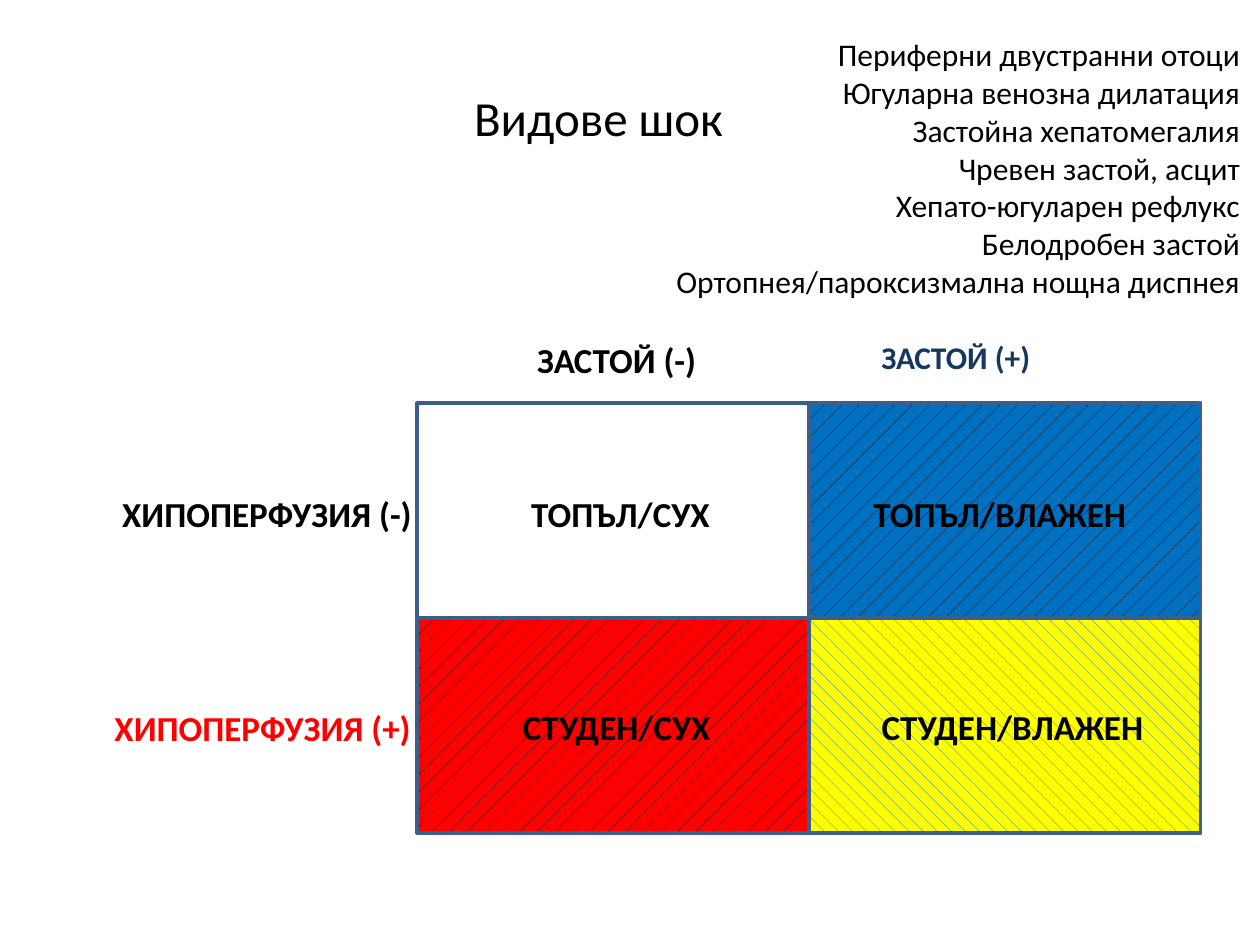
from pptx import Presentation
from pptx.dml.color import RGBColor
from pptx.enum.dml import MSO_PATTERN
from pptx.enum.shapes import MSO_SHAPE
from pptx.enum.text import MSO_ANCHOR, MSO_AUTO_SIZE, PP_ALIGN
from pptx.util import Inches, Pt

BLACK = RGBColor(0x00, 0x00, 0x00)
WHITE = RGBColor(0xFF, 0xFF, 0xFF)
RED = RGBColor(0xFF, 0x00, 0x00)
BLUE = RGBColor(0x00, 0x70, 0xC0)
YELLOW = RGBColor(0xFF, 0xFF, 0x00)
NAVY = RGBColor(0x17, 0x37, 0x5E)
BORDER = RGBColor(0x3A, 0x5F, 0x8C)

RECTANGLE = MSO_SHAPE.RECTANGLE
DOTS = MSO_PATTERN.PERCENT_5
SHINGLE = MSO_PATTERN.SHINGLE
MIDDLE = MSO_ANCHOR.MIDDLE
FIT_SHAPE = MSO_AUTO_SIZE.SHAPE_TO_FIT_TEXT
CENTER, RIGHT = PP_ALIGN.CENTER, PP_ALIGN.RIGHT

TITLE_ONLY = 5
GRID_LEFT, GRID_TOP = 3.31, 3.2
CELL_WIDTH, CELL_HEIGHT = 3.11, 1.7
ROW_STEP = 1.71

CONGESTION_SIGNS = [
    "Периферни двустранни отоци",
    "Югуларна венозна дилатация",
    "Застойна хепатомегалия",
    "Чревен застой, асцит",
    "Хепато-югуларен рефлукс",
    "Белодробен застой",
    "Ортопнея/пароксизмална нощна диспнея",
]
QUADRANTS = [
    (0, 0, WHITE, None, None),
    (1, 0, RED, DOTS, BLACK),
    (0, 1, BLUE, DOTS, BLACK),
    (1, 1, YELLOW, SHINGLE, BLUE),
]
AXIS_LABELS = [
    ("ХИПОПЕРФУЗИЯ (-)", 0.66, 3.86, 2.92, BLACK),
    ("ХИПОПЕРФУЗИЯ (+)", 0.59, 5.56, 2.99, RED),
]
SHOCK_TYPES = [
    ("ТОПЪЛ/СУХ", 3.37, 3.86, 3.11),
    ("ТОПЪЛ/ВЛАЖЕН", 6.42, 3.86, 3.03),
    ("СТУДЕН/СУХ", 3.34, 5.55, 3.11),
    ("СТУДЕН/ВЛАЖЕН", 6.48, 5.55, 3.11),
]


def write(frame, text, size=20, color=BLACK, bold=True, align=CENTER,
          before=0, indent=0):
    paragraph = frame.paragraphs[0]
    if paragraph.runs:
        paragraph = frame.add_paragraph()
    paragraph.alignment = align
    if before:
        paragraph.space_before = Pt(before)
    if indent:
        paragraph._p.get_or_add_pPr().set("marL", str(Inches(indent)))
    run = paragraph.add_run()
    run.text = text
    run.font.name = "Calibri"
    run.font.size = Pt(size)
    run.font.bold = bold
    run.font.color.rgb = color


class ShockSlide:
    def __init__(self, slide, border=BORDER, border_width=2):
        self.slide = slide
        self.border = border
        self.border_width = Pt(border_width)

    def title(self, text, left, top, width, height):
        heading = self.slide.shapes.title
        heading.left, heading.top = Inches(left), Inches(top)
        heading.width, heading.height = Inches(width), Inches(height)
        heading.text_frame.vertical_anchor = MIDDLE
        write(heading.text_frame, text, size=28, bold=False)

    def text_area(self, left, top, width, height=0.44, wrap=True):
        area = self.slide.shapes.add_textbox(
            Inches(left), Inches(top), Inches(width), Inches(height))
        frame = area.text_frame
        frame.word_wrap = wrap
        frame.auto_size = FIT_SHAPE
        return frame

    def label(self, text, left, top, width, wrap=True, color=BLACK):
        write(self.text_area(left, top, width, wrap=wrap), text, color=color)

    def quadrant(self, row, column, color, pattern, pattern_color):
        cell = self.slide.shapes.add_shape(
            RECTANGLE,
            Inches(GRID_LEFT + column * CELL_WIDTH),
            Inches(GRID_TOP + row * ROW_STEP),
            Inches(CELL_WIDTH), Inches(CELL_HEIGHT))
        cell.shadow.inherit = False
        if pattern is None:
            cell.fill.solid()
            cell.fill.fore_color.rgb = color
        else:
            cell.fill.patterned()
            cell.fill.pattern = pattern
            cell.fill.fore_color.rgb = pattern_color
            cell.fill.back_color.rgb = color
        cell.line.color.rgb = self.border
        cell.line.width = self.border_width


def main():
    deck = Presentation()
    deck.slide_width, deck.slide_height = Inches(10), Inches(7.5)
    page = ShockSlide(deck.slides.add_slide(deck.slide_layouts[TITLE_ONLY]))

    page.title("Видове шок", 0, 0.3, 9.5, 1.25)
    page.label("ЗАСТОЙ (-)", 4.16, 2.64, 1.47, wrap=False)

    signs = page.text_area(4.25, 0.23, 5.69, 2.83)
    for sign in CONGESTION_SIGNS:
        write(signs, sign, size=18, bold=False, align=RIGHT)
    write(signs, "ЗАСТОЙ (+)", size=18, color=NAVY, before=22, indent=0.98)

    for text, left, top, width, color in AXIS_LABELS:
        page.label(text, left, top, width, wrap=False, color=color)
    for quadrant in QUADRANTS:
        page.quadrant(*quadrant)
    for shock_type in SHOCK_TYPES:
        page.label(*shock_type)

    deck.save("out.pptx")


if __name__ == "__main__":
    main()
